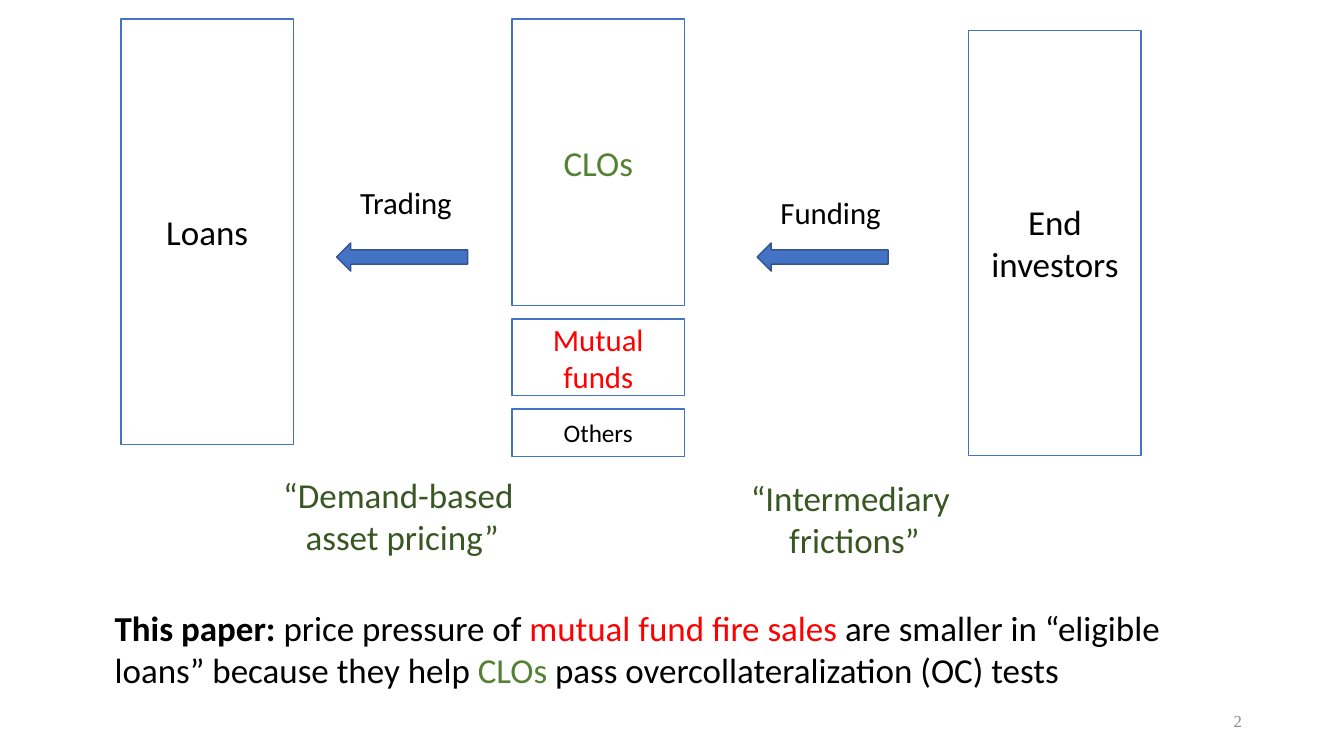
from collections import namedtuple

from pptx import Presentation
from pptx.dml.color import RGBColor
from pptx.enum.shapes import MSO_SHAPE
from pptx.enum.text import MSO_ANCHOR, MSO_AUTO_SIZE, PP_ALIGN
from pptx.util import Inches, Pt

RECTANGLE, ARROW = MSO_SHAPE.RECTANGLE, MSO_SHAPE.LEFT_ARROW
LEFT, CENTER, RIGHT = PP_ALIGN.LEFT, PP_ALIGN.CENTER, PP_ALIGN.RIGHT
TOP, MIDDLE = MSO_ANCHOR.TOP, MSO_ANCHOR.MIDDLE
GROW = MSO_AUTO_SIZE.SHAPE_TO_FIT_TEXT

WIDTH, HEIGHT = Inches(13.33), Inches(7.5)
COLUMN, ROW = WIDTH / 100, HEIGHT / 100
BLACK, WHITE, RED, GREEN = "000000", "FFFFFF", "FF0000", "548235"
DARK_GREEN, BLUE, DARK_BLUE, GRAY = "385723", "4472C4", "325491", "8C8C8C"
BAR_WIDTH, BAR_HEIGHT, BAR_GAP = 12.83, 56.27, 1.8
LABEL_HEIGHT, TWO_LINES = 6.27, 12.53

Box = namedtuple("Box", "left top width height")
Run = namedtuple("Run", "text color bold", defaults=(BLACK, False))


def color(hex_string):
    """Turn a hex string into a colour."""
    return RGBColor.from_string(hex_string)


def place(box):
    """Convert a box in grid columns and rows to slide lengths."""
    return (round(box.left * COLUMN), round(box.top * ROW),
            round(box.width * COLUMN), round(box.height * ROW))


def write(frame, lines, size, align, anchor, font="Calibri"):
    """Fill a text frame with lines, each a list of runs."""
    frame.word_wrap = True
    frame.vertical_anchor = anchor
    for index, line in enumerate(lines):
        paragraph = frame.add_paragraph() if index else frame.paragraphs[0]
        paragraph.alignment = align
        for part in line:
            run = paragraph.add_run()
            run.text = part.text
            run.font.name, run.font.size = font, Pt(size)
            run.font.bold = part.bold
            run.font.color.rgb = color(part.color)


def add_text(slide, box, lines, size, align=LEFT):
    """Add a text box that grows with its text."""
    frame = slide.shapes.add_textbox(*place(box)).text_frame
    write(frame, lines, size, align, TOP)
    frame.auto_size = GROW


def add_block(slide, kind, box, fill, line):
    """Add a flat preset shape."""
    shape = slide.shapes.add_shape(kind, *place(box))
    shape.shadow.inherit = False
    shape.fill.solid()
    shape.fill.fore_color.rgb = color(fill)
    shape.line.color.rgb = color(line)
    shape.line.width = Pt(1)
    return shape


def add_stack(slide, box, parts):
    """Stack labelled rectangles downward from the top of the box."""
    top = box.top
    for text, height, size, text_color in parts:
        bar = Box(box.left, top, box.width, height)
        shape = add_block(slide, RECTANGLE, bar, WHITE, BLUE)
        write(shape.text_frame, [[Run(text, text_color)]], size, CENTER, MIDDLE)
        top += height + BAR_GAP


def add_flow(slide, box, label, rise):
    """Fill the box with an arrow and set its label above it."""
    add_block(slide, ARROW, box, BLUE, DARK_BLUE)
    label_box = Box(box.left + 1, box.top - rise, box.width, LABEL_HEIGHT)
    add_text(slide, label_box, [[Run(label)]], 22)


def add_theory(slide, box, lines):
    """Name the strand of theory in centred lines."""
    add_text(slide, box, [[Run(line, DARK_GREEN)] for line in lines], 25, CENTER)


def add_conclusion(slide, box):
    """State what the paper finds."""
    add_text(slide, box, [[
        Run("This paper:", bold=True),
        Run(" price pressure of "),
        Run("mutual fund fire sales", RED),
        Run(" are smaller in “eligible loans” because they help "),
        Run("CLOs", GREEN),
        Run(" pass overcollateralization (OC) tests"),
    ]], 25)


def add_page_number(slide, box, number):
    """Set the page number at the right of the box."""
    frame = slide.shapes.add_textbox(*place(box)).text_frame
    write(frame, [[Run(number, GRAY)]], 12, RIGHT, MIDDLE, "Times New Roman")


def main():
    """Build and save the slide."""
    presentation = Presentation()
    presentation.slide_width, presentation.slide_height = WIDTH, HEIGHT
    slide = presentation.slides.add_slide(presentation.slide_layouts[6])

    add_page_number(slide, Box(70.65, 92.67, 22.5, 5.33), "2")
    stacks = [
        (9, 2.53, [("Loans", BAR_HEIGHT, 25, BLACK)]),
        (38.1, 2.53, [("CLOs", 37.87, 25, GREEN),
                      ("Mutual funds", 10.13, 22, RED),
                      ("Others", 6.27, 18, BLACK)]),
        (72.08, 4, [("End investors", BAR_HEIGHT, 25, BLACK)]),
    ]
    for left, top, parts in stacks:
        add_stack(slide, Box(left, top, BAR_WIDTH, BAR_HEIGHT), parts)
    for left, label, rise in [(25.05, "Trading", 8.53), (56.33, "Funding", 7.2)]:
        add_flow(slide, Box(left, 32.13, 9.75, 3.73), label, rise)
    add_theory(slide, Box(20.18, 62, 19.5, TWO_LINES),
               ["“Demand-based ", "asset pricing”"])
    add_theory(slide, Box(55.05, 62.4, 17.03, TWO_LINES),
               ["“Intermediary ", "frictions”"])
    add_conclusion(slide, Box(7.8, 79.6, 81.45, TWO_LINES))
    presentation.save("out.pptx")


if __name__ == "__main__":
    main()
